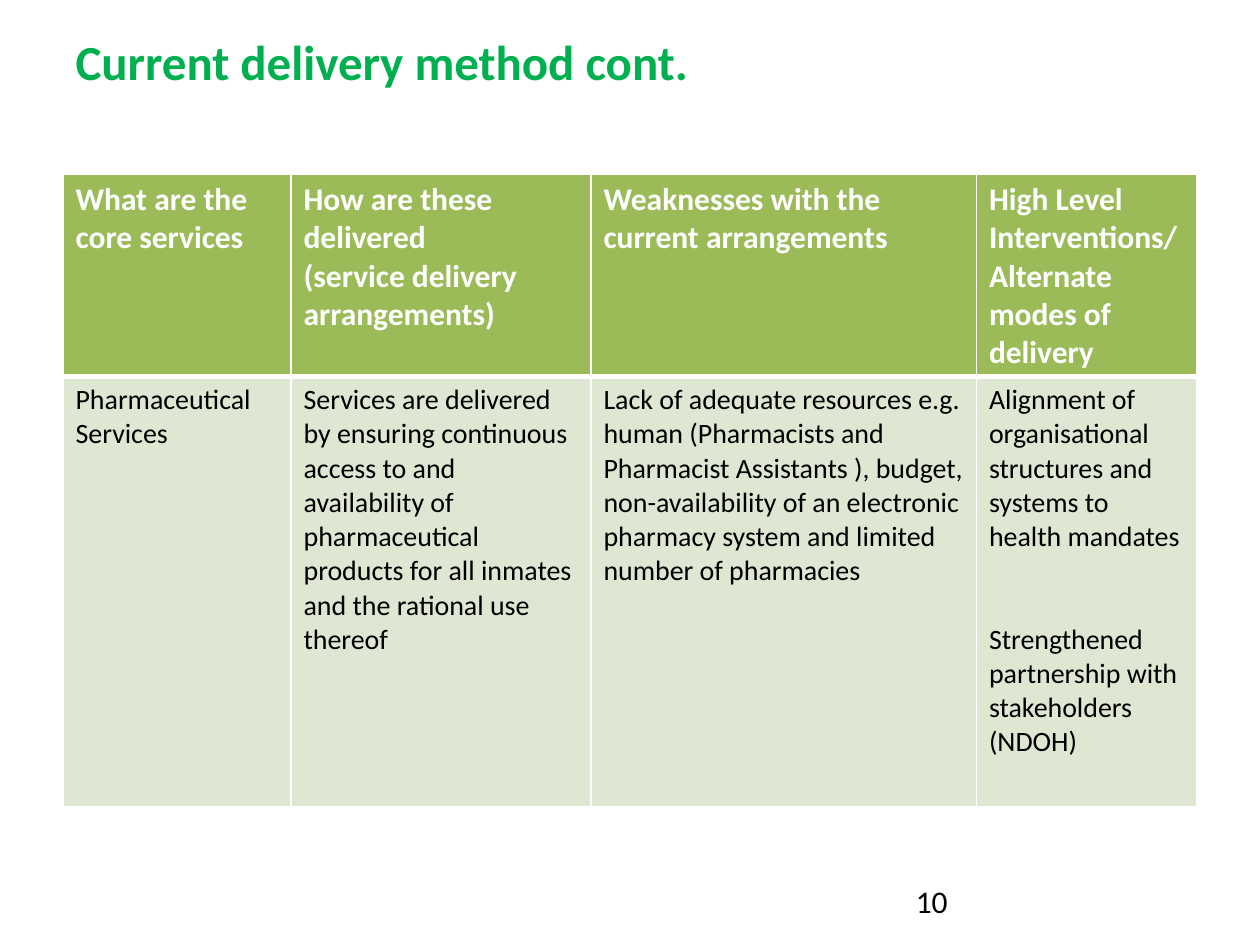
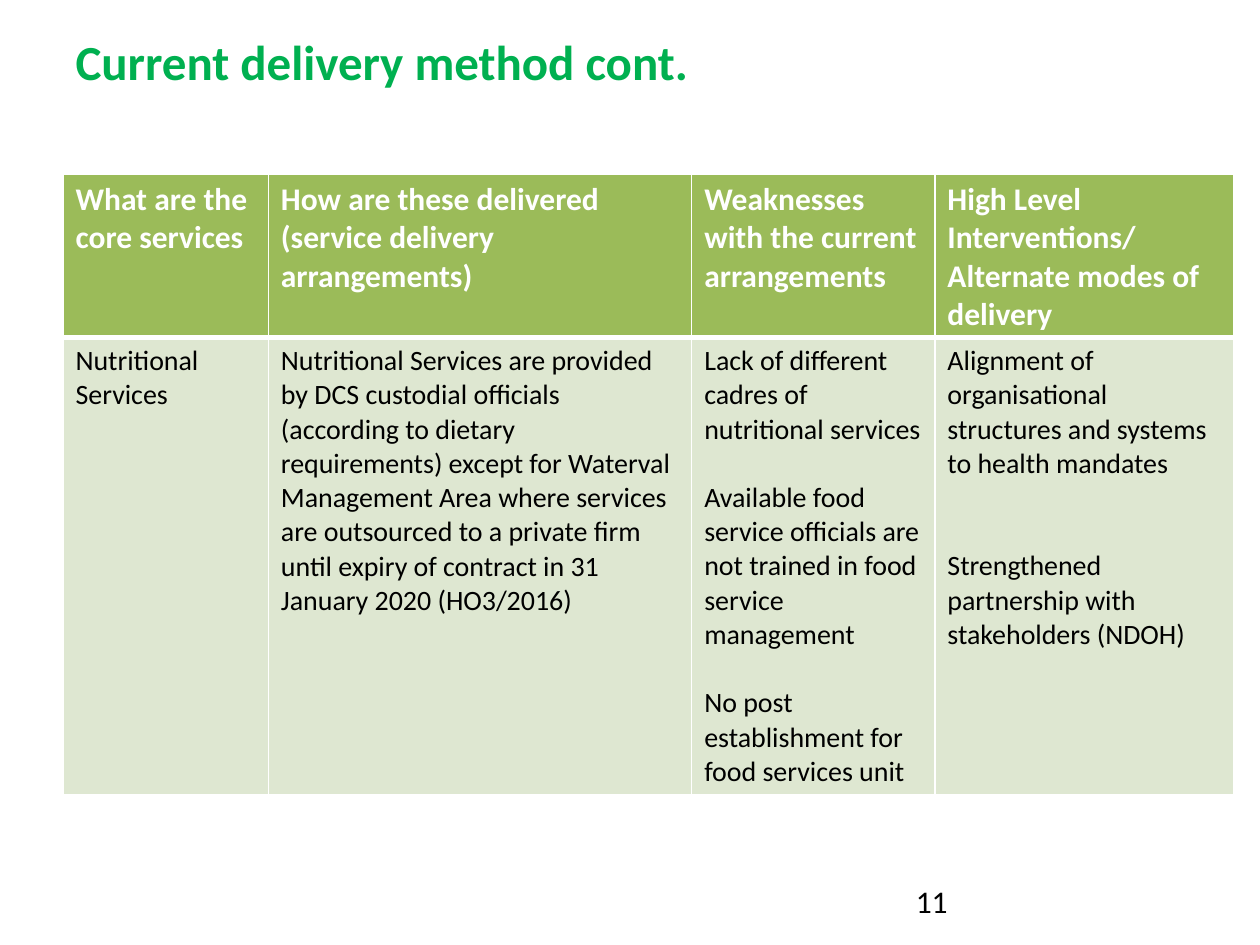
from lxml import etree
from pptx import Presentation
from pptx.dml.color import RGBColor
from pptx.enum.text import MSO_ANCHOR, MSO_AUTO_SIZE, PP_ALIGN
from pptx.oxml.ns import qn
from pptx.util import Pt

LEFT = PP_ALIGN.LEFT
TOP, MIDDLE = MSO_ANCHOR.TOP, MSO_ANCHOR.MIDDLE
GROW = MSO_AUTO_SIZE.SHAPE_TO_FIT_TEXT
TITLE_ONLY = 5
PX = 9144  # 100 px to the inch

WHITE = "FFFFFF"
TITLE_FORMAT = {"name": "Calibri", "size": Pt(28), "bold": True, "color": "00B050"}
NUMBER_FORMAT = {"name": "Calibri", "size": Pt(18), "bold": False, "color": "000000"}
HEADER_FORMAT = {"name": "Calibri", "size": Pt(18), "bold": True, "color": WHITE}
BODY_FORMAT = {"name": "Calibri", "size": Pt(16), "bold": False, "color": "000000"}

# Fill, text format, border widths in points and blank lines between paragraphs per column
ROW_STYLES = [
    ("9BBB59", HEADER_FORMAT, {"L": 1, "R": 1, "T": 1, "B": 3}, [0, 0, 0, 0]),
    ("DEE7D1", BODY_FORMAT, {"L": 1, "R": 1, "T": 3, "B": 1}, [0, 0, 1, 2]),
]
BODY_LINE = 19.5

TITLE = "Current delivery method cont."
HEADERS = [
    ["What are the core services"],
    ["How are these delivered", "(service delivery arrangements)"],
    ["Weaknesses with the current arrangements"],
    ["High Level Interventions/ Alternate modes of delivery"],
]
INTERVENTIONS = [
    "Alignment of organisational structures and systems to health mandates",
    "Strengthened partnership with stakeholders (NDOH)",
]
SERVICES = [
    {
        "number": "10",
        "columns": [181, 238, 306, 175],
        "rows": [161, 341],
        "cells": [
            ["Pharmaceutical Services"],
            ["Services are delivered by ensuring continuous access to and availability of "
             "pharmaceutical products for all inmates and the rational use thereof"],
            ["Lack of adequate resources e.g. human (Pharmacists and Pharmacist Assistants ), "
             "budget, non-availability of an electronic pharmacy system and limited number "
             "of pharmacies"],
            INTERVENTIONS,
        ],
    },
    {
        "number": "11",
        "columns": [163, 336, 193, 237],
        "rows": [130, 363],
        "cells": [
            ["Nutritional Services"],
            ["Nutritional Services are provided by DCS custodial officials (according to "
             "dietary requirements) except for Waterval Management Area where services are "
             "outsourced to a private firm until expiry of contract in 31 January 2020 "
             "(HO3/2016)"],
            ["Lack of different cadres of nutritional services",
             "Available food service officials are not trained in food service management",
             "No post establishment for food services unit"],
            INTERVENTIONS,
        ],
    },
]


def write(text_frame, lines, text_format, gap=0):
    """Fill a text frame with left-aligned paragraphs, gap points apart."""
    for index, line in enumerate(lines):
        paragraph = text_frame.paragraphs[0] if index == 0 else text_frame.add_paragraph()
        paragraph.alignment = LEFT
        if index and gap:
            paragraph.space_before = Pt(gap)
        run = paragraph.add_run()
        run.text = line
        for name, value in text_format.items():
            if name == "color":
                run.font.color.rgb = RGBColor.from_string(value)
            else:
                setattr(run.font, name, value)


def add_borders(cell, widths):
    properties = cell._tc.get_or_add_tcPr()
    for side, points in widths.items():
        line = etree.SubElement(properties, qn(f"a:ln{side}"), w=str(Pt(points)))
        fill = etree.SubElement(line, qn("a:solidFill"))
        etree.SubElement(fill, qn("a:srgbClr"), val=WHITE)


presentation = Presentation()
presentation.slide_width, presentation.slide_height = 1000 * PX, 750 * PX

for service in SERVICES:
    slide = presentation.slides.add_slide(presentation.slide_layouts[TITLE_ONLY])

    title = slide.shapes.title
    title.left, title.top, title.width, title.height = 50 * PX, 20 * PX, 900 * PX, 57 * PX
    title.text_frame.vertical_anchor = TOP
    title.text_frame.auto_size = GROW
    write(title.text_frame, [TITLE], TITLE_FORMAT)

    columns, rows = service["columns"], service["rows"]
    table = slide.shapes.add_table(
        len(rows), len(columns), 50 * PX, 138 * PX, sum(columns) * PX, sum(rows) * PX
    ).table
    table.horz_banding = False
    for column, width in zip(table.columns, columns):
        column.width = width * PX
    for row, height in zip(table.rows, rows):
        row.height = height * PX

    for row, texts, style in zip(table.rows, [HEADERS, service["cells"]], ROW_STYLES):
        fill, text_format, borders, blank_lines = style
        for cell, lines, blanks in zip(row.cells, texts, blank_lines):
            add_borders(cell, borders)
            cell.fill.solid()
            cell.fill.fore_color.rgb = RGBColor.from_string(fill)
            write(cell.text_frame, lines, text_format, blanks * BODY_LINE)

    number_box = slide.shapes.add_textbox(717 * PX, 695 * PX, 233 * PX, 40 * PX)
    number_box.text_frame.word_wrap = True
    number_box.text_frame.vertical_anchor = MIDDLE
    write(number_box.text_frame, [service["number"]], NUMBER_FORMAT)

presentation.save("out.pptx")
